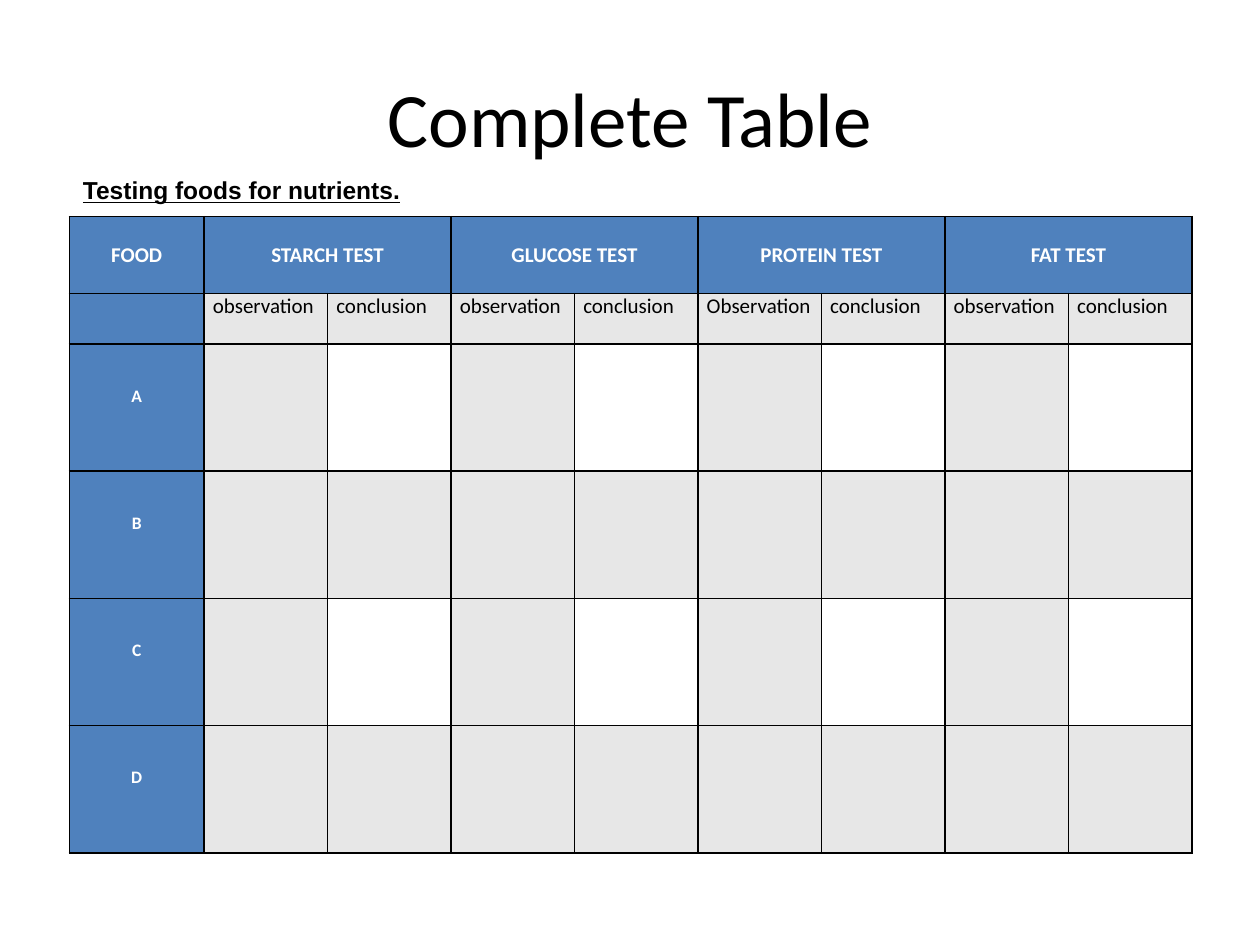
from pptx import Presentation
from pptx.dml.color import RGBColor
from pptx.enum.text import MSO_ANCHOR as Anchor, PP_ALIGN as Align
from pptx.oxml import parse_xml
from pptx.oxml.ns import nsdecls
from pptx.util import Inches, Pt

BLACK = RGBColor(0x00, 0x00, 0x00)
WHITE = RGBColor(0xFF, 0xFF, 0xFF)
BLUE = RGBColor(0x4F, 0x81, 0xBD)
GREY = RGBColor(0xE7, 0xE7, 0xE7)

TESTS = ["STARCH TEST", "GLUCOSE TEST", "PROTEIN TEST", "FAT TEST"]
FOODS = ["A", "B", "C", "D"]
SUBHEADINGS = ["observation", "conclusion"] * len(TESTS)
SUBHEADINGS[4] = "Observation"
COLUMN_WIDTHS = [1.07] + [0.98] * len(SUBHEADINGS)
ROW_HEIGHTS = [0.61, 0.4] + [1.01] * len(FOODS)

TITLE_FONT = {"name": "Calibri", "size": Pt(44)}
SUBTITLE_FONT = {"name": "Arial", "size": Pt(14), "bold": True, "underline": True}
HEADING_FONT = {"name": "Calibri", "size": Pt(12), "bold": True}
FOOD_FONT = HEADING_FONT | {"size": Pt(10)}
BODY_FONT = HEADING_FONT | {"bold": False}


class SlideBuilder:
    """Hold the current slide and its style, and add each kind of element."""

    def __init__(self, slide):
        self.slide = slide

    def add_run(self, frame, text, font, color=BLACK, align=Align.LEFT):
        paragraph = frame.paragraphs[0]
        paragraph.alignment = align
        run = paragraph.add_run()
        run.text = text
        for name, value in font.items():
            setattr(run.font, name, value)
        run.font.color.rgb = color

    def title(self, text, left, top, width, height):
        shape = self.slide.shapes.title
        shape.left, shape.top = Inches(left), Inches(top)
        shape.width, shape.height = Inches(width), Inches(height)
        shape.text_frame.vertical_anchor = Anchor.MIDDLE
        self.add_run(shape.text_frame, text, TITLE_FONT, align=Align.CENTER)

    def text(self, text, left, top, width, height):
        shape = self.slide.shapes.add_textbox(
            Inches(left), Inches(top), Inches(width), Inches(height))
        frame = shape.text_frame
        frame.word_wrap = True
        frame.margin_top = 0
        self.add_run(frame, text, SUBTITLE_FONT)

    def table(self, left, top):
        shape = self.slide.shapes.add_table(
            len(ROW_HEIGHTS), len(COLUMN_WIDTHS), Inches(left), Inches(top),
            Inches(sum(COLUMN_WIDTHS)), Inches(sum(ROW_HEIGHTS)))
        table = shape.table
        for column, width in zip(table.columns, COLUMN_WIDTHS):
            column.width = Inches(width)
        for row, height in zip(table.rows, ROW_HEIGHTS):
            row.height = Inches(height)
        return table

    def cell(self, cell, fill):
        for side in ("lnL", "lnR", "lnT", "lnB"):
            cell._tc.get_or_add_tcPr().append(parse_xml(
                f'<a:{side} {nsdecls("a")} w="{Pt(1)}"><a:solidFill>'
                f'<a:srgbClr val="{BLACK}"/></a:solidFill></a:{side}>'))
        cell.fill.solid()
        cell.fill.fore_color.rgb = fill
        cell.margin_left = cell.margin_right = Inches(0.07)
        cell.margin_top = cell.margin_bottom = 0

    def heading(self, cell, text, font=HEADING_FONT):
        cell.vertical_anchor = Anchor.MIDDLE
        self.add_run(cell.text_frame, text, font, WHITE, Align.CENTER)


def cell_fill(row, column):
    if row == 0 or column == 0:
        return BLUE
    return WHITE if row > 1 and row % 2 == 0 and column % 2 == 0 else GREY


def main():
    presentation = Presentation()
    presentation.slide_width, presentation.slide_height = Inches(10), Inches(7.5)
    builder = SlideBuilder(presentation.slides.add_slide(presentation.slide_layouts[5]))
    builder.title("Complete Table", 0.5, 0.3, 9, 1.25)

    table = builder.table(0.55, 1.72)
    for row in range(len(ROW_HEIGHTS)):
        for column in range(len(COLUMN_WIDTHS)):
            builder.cell(table.cell(row, column), cell_fill(row, column))

    builder.heading(table.cell(0, 0), "FOOD")
    for index, test in enumerate(TESTS):
        column = 1 + 2 * index
        table.cell(0, column).merge(table.cell(0, column + 1))
        builder.heading(table.cell(0, column), test)
    for column, text in enumerate(SUBHEADINGS, start=1):
        builder.add_run(table.cell(1, column).text_frame, text, BODY_FONT)
    for row, food in enumerate(FOODS, start=2):
        cell = table.cell(row, 0)
        cell.margin_bottom = Inches(0.18)
        builder.heading(cell, food, FOOD_FONT)

    builder.text("Testing foods for nutrients.", 0.56, 1.39, 8.9, 0.3)
    presentation.save("out.pptx")


if __name__ == "__main__":
    main()
